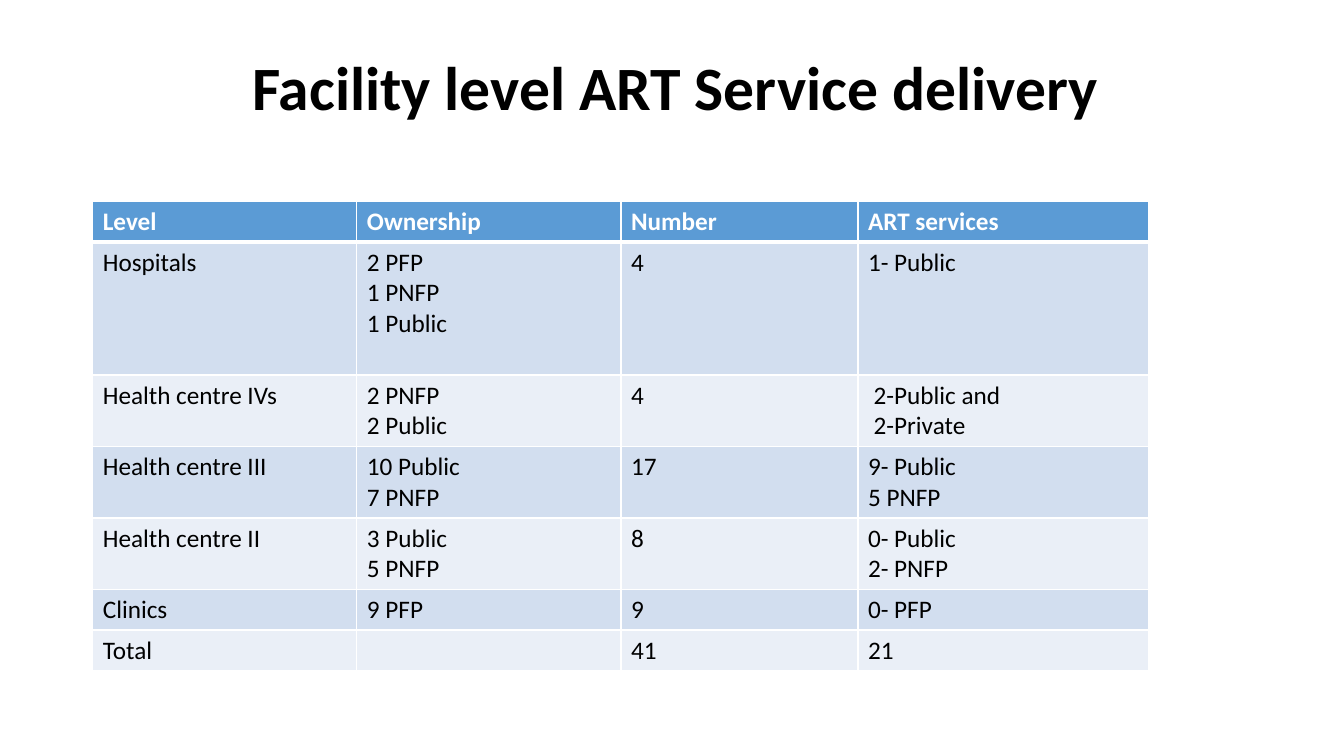
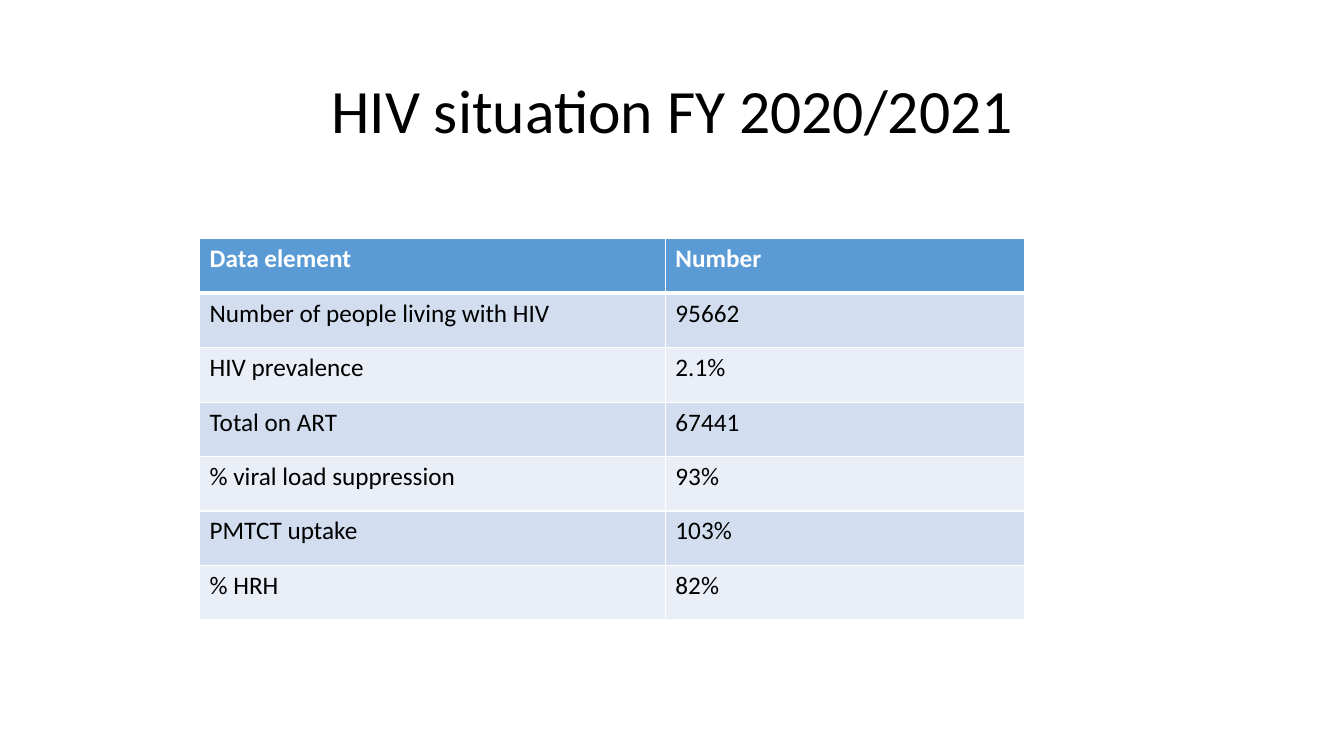
from dataclasses import dataclass

from lxml import etree
from pptx import Presentation
from pptx.dml.color import RGBColor
from pptx.enum.text import MSO_ANCHOR, PP_ALIGN
from pptx.oxml.ns import qn
from pptx.util import Inches, Pt

CENTER = PP_ALIGN.CENTER
LEFT = PP_ALIGN.LEFT
MIDDLE = MSO_ANCHOR.MIDDLE
BLANK_LAYOUT = 6


@dataclass(frozen=True)
class Theme:
    font: str = "Calibri"
    ink: str = "000000"
    white: str = "FFFFFF"
    header: str = "5B9BD5"
    bands: tuple = ("D2DEEF", "EAEFF7")
    title_size: int = 44
    cell_size: int = 18
    rule: int = 1
    header_rule: int = 3


THEME = Theme()

FACILITIES = [
    ["Level", "Ownership", "Number", "ART services"],
    ["Hospitals", "2 PFP\n1 PNFP\n1 Public", "4", "1- Public"],
    ["Health centre IVs", "2 PNFP\n2 Public", "4", " 2-Public and\n 2-Private"],
    ["Health centre III", "10 Public\n7 PNFP", "17", "9- Public\n5 PNFP"],
    ["Health centre II", "3 Public\n5 PNFP", "8", "0- Public\n2- PNFP"],
    ["Clinics", "9 PFP", "9", "0- PFP"],
    ["Total", "", "41", "21"],
]
HIV_SITUATION = [
    ["Data element", "Number"],
    ["Number of people living with HIV", "95662"],
    ["HIV prevalence", "2.1%"],
    ["Total on ART", "67441"],
    ["% viral load suppression", "93%"],
    ["PMTCT uptake", "103%"],
    ["% HRH", "82%"],
]


def write_text(frame, text, *, size, color=THEME.ink, bold=False,
               align=LEFT, line_spacing=1.0):
    """Write each line of the text as its own paragraph."""
    for index, line in enumerate(text.split("\n")):
        para = frame.paragraphs[0] if index == 0 else frame.add_paragraph()
        para.alignment = align
        para.line_spacing = line_spacing
        para.font.size = Pt(size)
        if line:
            span = para.add_run()
            span.text = line
            span.font.name = THEME.font
            span.font.size = Pt(size)
            span.font.bold = bold
            span.font.color.rgb = RGBColor.from_string(color)


def add_title(page, text, left, top, width, height, *, bold=False):
    box = page.shapes.add_textbox(*map(Inches, (left, top, width, height)))
    frame = box.text_frame
    frame.word_wrap = True
    frame.vertical_anchor = MIDDLE
    write_text(frame, text, size=THEME.title_size, bold=bold,
               align=CENTER, line_spacing=0.9)


def set_borders(cell, *, top, bottom):
    """Draw white cell borders; must run before the cell's fill is set."""
    properties = cell._tc.get_or_add_tcPr()
    sides = {"lnL": THEME.rule, "lnR": THEME.rule, "lnT": top, "lnB": bottom}
    for side, width in sides.items():
        line = etree.SubElement(properties, qn(f"a:{side}"), w=str(Pt(width)))
        fill = etree.SubElement(line, qn("a:solidFill"))
        etree.SubElement(fill, qn("a:srgbClr"), val=THEME.white)


def format_cell(cell, text, row):
    is_header = row == 0
    set_borders(cell,
                top=THEME.header_rule if row == 1 else THEME.rule,
                bottom=THEME.header_rule if is_header else THEME.rule)
    color = THEME.header if is_header else THEME.bands[(row - 1) % 2]
    cell.fill.solid()
    cell.fill.fore_color.rgb = RGBColor.from_string(color)
    write_text(cell.text_frame, text, size=THEME.cell_size, bold=is_header,
               color=THEME.white if is_header else THEME.ink)


def add_data_table(page, rows, left, top, column_widths, row_heights):
    bounds = (left, top, sum(column_widths), sum(row_heights))
    table = page.shapes.add_table(len(rows), len(column_widths),
                                  *map(Inches, bounds)).table
    for column, width in zip(table.columns, column_widths):
        column.width = Inches(width)
    for row, height in zip(table.rows, row_heights):
        row.height = Inches(height)
    for row_index, texts in enumerate(rows):
        for column_index, text in enumerate(texts):
            format_cell(table.cell(row_index, column_index), text, row_index)


def build_facility_page(deck):
    page = deck.slides.add_slide(deck.slide_layouts[BLANK_LAYOUT])
    # The trailing space shifts the centred line slightly to the left.
    add_title(page, "Facility level ART Service delivery ",
              1.13, 0.4, 11.28, 0.99, bold=True)
    one_line, two_lines, hospitals = 0.4, 0.71, 1.32
    add_data_table(page, FACILITIES, 0.92, 2, [2.62, 2.62, 2.35, 2.88],
                   [one_line, hospitals] + [two_lines] * 3 + [one_line] * 2)


def build_situation_page(deck):
    page = deck.slides.add_slide(deck.slide_layouts[BLANK_LAYOUT])
    add_title(page, "HIV situation FY 2020/2021", 0.92, 0.4, 11.5, 1.45)
    add_data_table(page, HIV_SITUATION, 1.98, 2.37, [4.62, 3.56],
                   [0.54] * len(HIV_SITUATION))


def main():
    deck = Presentation()
    deck.slide_width = Inches(13.33)
    deck.slide_height = Inches(7.5)
    build_facility_page(deck)
    build_situation_page(deck)
    deck.save("out.pptx")


if __name__ == "__main__":
    main()
